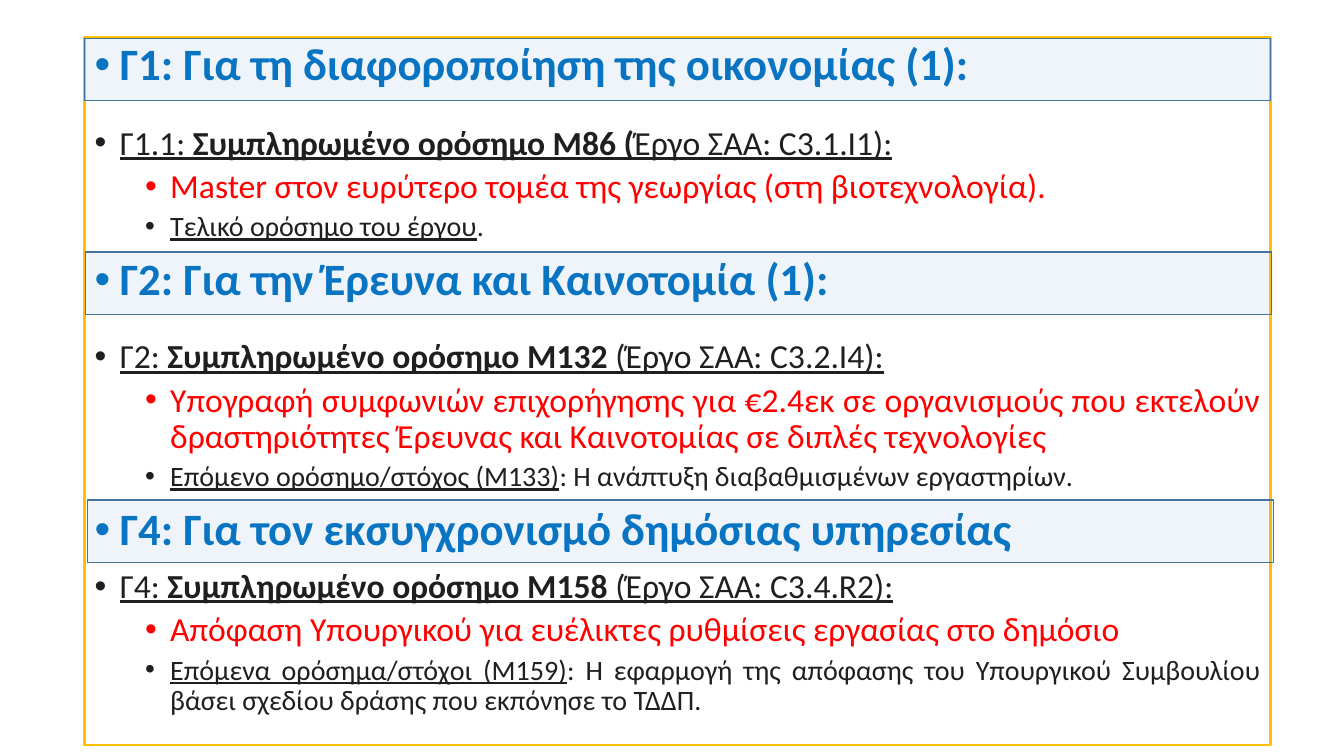
from lxml import etree
from pptx import Presentation
from pptx import util as u
from pptx.dml.color import RGBColor
from pptx.enum import shapes, text
from pptx.oxml.ns import qn

BLUE = RGBColor(0x00, 0x70, 0xC0)
DARK = RGBColor(0x1F, 0x1F, 0x1F)
RED = RGBColor(0xFF, 0x00, 0x00)
GOLD = RGBColor(0xFF, 0xC0, 0x00)
BAND = RGBColor(0x5B, 0x9B, 0xD5)
BAND_LINE = RGBColor(0x43, 0x73, 0x9E)

SECTIONS = [
    {"heading": "Γ1: Για τη διαφοροποίηση της οικονομίας (1):",
     "milestone": ("Γ1.1: ", "Συμπληρωμένο ορόσημο Μ86 (", "Έργο ΣΑΑ: C3.1.Ι1):"),
     "gap": 25.4,
     "result": "Master στον ευρύτερο τομέα της γεωργίας (στη βιοτεχνολογία).",
     "next": ("Τελικό ορόσημο του έργου", "."),
     "band": (0.84, 0.38)},
    {"heading": "Γ2: Για την Έρευνα και Καινοτομία (1):",
     "milestone": ("Γ2: ", "Συμπληρωμένο ορόσημο Μ132", " (Έργο ΣΑΑ: C3.2.Ι4):"),
     "gap": 24.6,
     "result": "Υπογραφή συμφωνιών επιχορήγησης για €2.4εκ σε οργανισμούς που "
               "εκτελούν δραστηριότητες Έρευνας και Καινοτομίας σε διπλές τεχνολογίες",
     "next": ("Επόμενο ορόσημο/στόχος (Μ133)",
              ": H ανάπτυξη διαβαθμισμένων εργαστηρίων."),
     "band": (0.85, 2.5)},
    {"heading": "Γ4: Για τον εκσυγχρονισμό δημόσιας υπηρεσίας",
     "milestone": ("Γ4: ", "Συμπληρωμένο ορόσημο Μ158", " (Έργο ΣΑΑ: C3.4.R2):"),
     "gap": 10,
     "result": "Απόφαση Υπουργικού για ευέλικτες ρυθμίσεις εργασίας στο δημόσιο",
     "next": ("Επόμενα ορόσημα/στόχοι (Μ159)",
              ": H εφαρμογή της απόφασης του Υπουργικού Συμβουλίου "
              "βάσει σχεδίου δράσης που εκπόνησε το ΤΔΔΠ."),
     "band": (0.87, 4.96)},
]
WIDTH, BAND_HEIGHT = 11.76, 0.62
FRAME = (0.84, 0.37, WIDTH, 7.02)
LEFT, JUSTIFY = text.PP_ALIGN.LEFT, text.PP_ALIGN.JUSTIFY


def add_rect(s, box, line, weight):
    sp = s.shapes.add_shape(shapes.MSO_SHAPE.RECTANGLE, *map(u.Inches, box))
    sp.shadow.inherit = False
    sp.line.color.rgb = line
    sp.line.width = u.Pt(weight)
    return sp


def add_bullet(p, runs, size, color, margin, before, align=JUSTIFY):
    p.alignment = align
    p.line_spacing = 0.9
    p.space_before = u.Pt(before)
    pPr = p._p.get_or_add_pPr()
    pPr.set("marL", str(u.Inches(margin)))
    pPr.set("indent", str(-u.Inches(0.25)))
    etree.SubElement(pPr, qn("a:buFont")).set("typeface", "Arial")
    etree.SubElement(pPr, qn("a:buChar")).set("char", "•")
    for words, bold, underline in runs:
        r = p.add_run()
        r.text = words
        r.font.name = "Calibri"
        r.font.size = u.Pt(size)
        r.font.bold = bold
        r.font.underline = underline
        r.font.color.rgb = color


def section_bullets(section):
    label, done, project = section["milestone"]
    follow, detail = section["next"]
    return [
        ([(section["heading"], True, False)], 32, BLUE, 0.25, 10, LEFT),
        ([(label, False, True), (done, True, True), (project, False, True)],
         24, DARK, 0.25, section["gap"]),
        ([(section["result"], False, False)], 24, RED, 0.75, 5),
        ([(follow, False, True), (detail, False, False)], 20, DARK, 0.75, 5),
    ]


def main():
    prs = Presentation()
    prs.slide_width, prs.slide_height = u.Inches(13.33), u.Inches(7.5)
    s = prs.slides.add_slide(prs.slide_layouts[6])

    frame = add_rect(s, FRAME, GOLD, 1.75)
    frame.fill.background()
    tf = frame.text_frame
    tf.word_wrap = True
    tf.vertical_anchor = text.MSO_ANCHOR.TOP
    bullets = [b for section in SECTIONS for b in section_bullets(section)]
    for i, bullet in enumerate(bullets):
        p = tf.add_paragraph() if i else tf.paragraphs[0]
        add_bullet(p, *bullet)

    for section in SECTIONS:
        band = add_rect(s, (*section["band"], WIDTH, BAND_HEIGHT), BAND_LINE, 1)
        band.fill.solid()
        band.fill.fore_color.rgb = BAND
        color = band.fill._xPr.find(qn("a:solidFill"))[0]
        etree.SubElement(color, qn("a:alpha")).set("val", "10000")

    prs.save("out.pptx")


if __name__ == "__main__":
    main()
